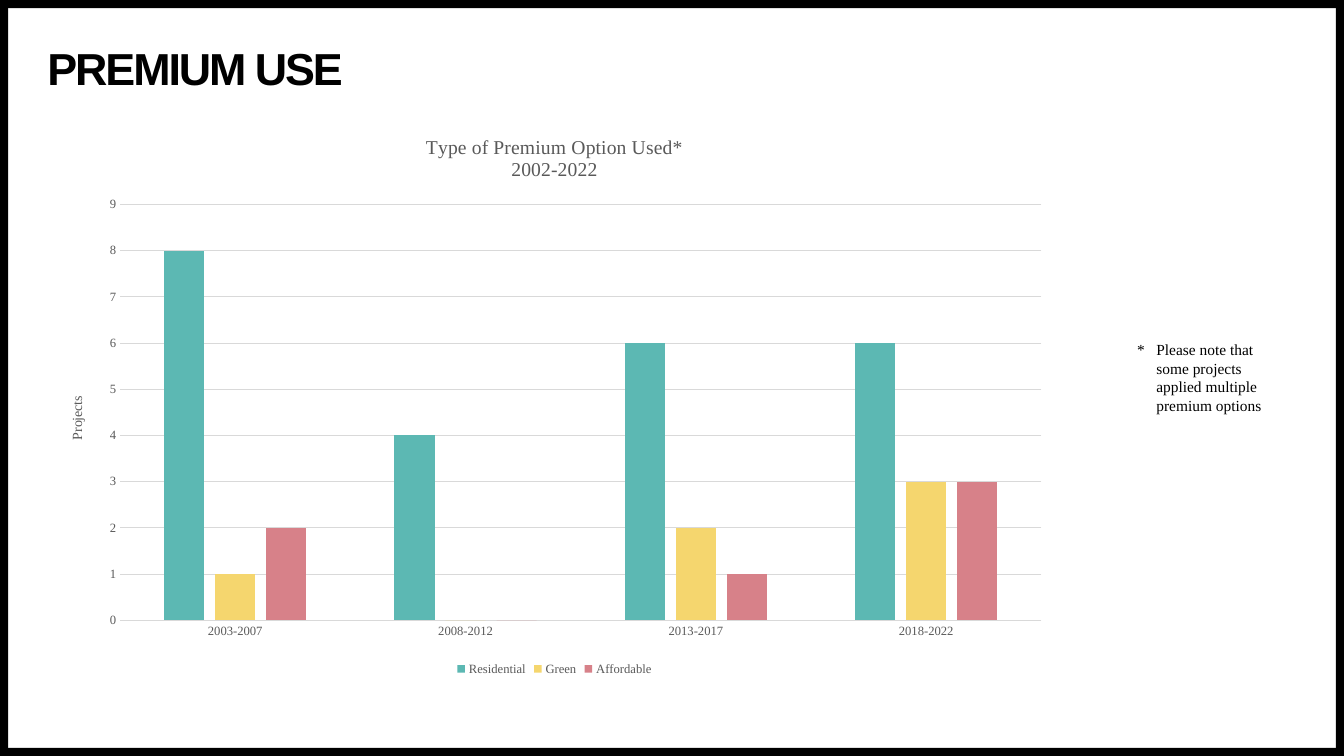
from dataclasses import dataclass

from pptx import Presentation
from pptx.chart.data import CategoryChartData
from pptx.dml.color import RGBColor
from pptx.enum.chart import XL_CHART_TYPE, XL_LEGEND_POSITION, XL_TICK_MARK
from pptx.enum.shapes import MSO_SHAPE
from pptx.enum.text import MSO_ANCHOR
from pptx.util import Inches, Pt

CLUSTERED = XL_CHART_TYPE.COLUMN_CLUSTERED
LEGEND_BOTTOM = XL_LEGEND_POSITION.BOTTOM
NO_TICK = XL_TICK_MARK.NONE
RECTANGLE = MSO_SHAPE.RECTANGLE
MIDDLE = MSO_ANCHOR.MIDDLE


@dataclass(frozen=True)
class Theme:
    black: RGBColor = RGBColor.from_string("000000")
    gray: RGBColor = RGBColor.from_string("595959")
    grid: RGBColor = RGBColor.from_string("D9D9D9")
    heading_font: str = "Arial"
    body_font: str = "Times New Roman"
    heading_size: int = 32
    chart_title_size: int = 14
    note_size: int = 11
    axis_title_size: int = 10
    label_size: int = 9
    line_width: float = 0.75


THEME = Theme()
PERIODS = ("2003-2007", "2008-2012", "2013-2017", "2018-2022")
PREMIUMS = (
    ("Residential", (8, 4, 6, 6), RGBColor.from_string("5CB8B3")),
    ("Green", (1, 0, 2, 3), RGBColor.from_string("F5D66E")),
    ("Affordable", (2, 0, 1, 3), RGBColor.from_string("D78189")),
)


def style_font(font, name, size, color, bold=False):
    font.name = name
    font.size = Pt(size)
    font.color.rgb = color
    font.bold = bold


def style_line(line):
    line.color.rgb = THEME.grid
    line.width = Pt(THEME.line_width)


def add_frame(slide, left, top, width, height, thickness=0.08):
    sides = (
        (left, top, width, thickness),
        (left, top + height - thickness, width, thickness),
        (left, top, thickness, height),
        (left + width - thickness, top, thickness, height),
    )
    for side in sides:
        shape = slide.shapes.add_shape(RECTANGLE, *map(Inches, side))
        shape.shadow.inherit = False
        shape.fill.solid()
        shape.fill.fore_color.rgb = THEME.black
        shape.line.fill.background()


def add_heading(slide, left, top, width, height):
    box = slide.shapes.add_textbox(*map(Inches, (left, top, width, height)))
    text_frame = box.text_frame
    text_frame.word_wrap = True
    text_frame.vertical_anchor = MIDDLE
    text_frame.margin_left = text_frame.margin_right = 0
    text_frame.margin_top = text_frame.margin_bottom = 0
    text_frame.text = "PREMIUM USE"
    paragraph = text_frame.paragraphs[0]
    paragraph.line_spacing = 0.9
    run = paragraph.runs[0]
    style_font(run.font, THEME.heading_font, THEME.heading_size, THEME.black, True)
    run.font._element.set("spc", "-150")


def style_chart_title(title, text, size):
    title.text_frame.text = text
    for paragraph in title.text_frame.paragraphs:
        for run in paragraph.runs:
            style_font(run.font, THEME.body_font, size, THEME.gray)


def style_axes(chart):
    for axis in (chart.category_axis, chart.value_axis):
        axis.major_tick_mark = NO_TICK
        axis.minor_tick_mark = NO_TICK
        style_font(axis.tick_labels.font, THEME.body_font, THEME.label_size, THEME.gray)
    style_line(chart.category_axis.format.line)
    value_axis = chart.value_axis
    value_axis.minimum_scale = 0
    value_axis.maximum_scale = 9
    value_axis.major_unit = 1
    value_axis.format.line.fill.background()
    style_line(value_axis.major_gridlines.format.line)
    style_chart_title(value_axis.axis_title, "Projects", THEME.axis_title_size)


def add_premium_chart(slide, left, top, width, height):
    data = CategoryChartData()
    data.categories = PERIODS
    for name, values, _ in PREMIUMS:
        data.add_series(name, values)
    box = map(Inches, (left, top, width, height))
    chart = slide.shapes.add_chart(CLUSTERED, *box, data).chart
    style_font(chart.font, THEME.body_font, THEME.axis_title_size, THEME.black)
    title = "Type of Premium Option Used*\n2002-2022"
    style_chart_title(chart.chart_title, title, THEME.chart_title_size)
    chart.chart_title.include_in_layout = False
    style_axes(chart)
    plot = chart.plots[0]
    plot.gap_width = 219
    plot.overlap = -27
    plot.vary_by_categories = False
    for series, (_, _, color) in zip(plot.series, PREMIUMS):
        series.format.fill.solid()
        series.format.fill.fore_color.rgb = color
    chart.has_legend = True
    chart.legend.position = LEGEND_BOTTOM
    chart.legend.include_in_layout = False
    style_font(chart.legend.font, THEME.body_font, THEME.label_size, THEME.gray)


def add_note(slide, left, top, width, height, hanging=0.19):
    box = slide.shapes.add_textbox(*map(Inches, (left, top, width, height)))
    text_frame = box.text_frame
    text_frame.word_wrap = True
    text_frame.text = "*\tPlease note that some projects applied multiple premium options"
    paragraph = text_frame.paragraphs[0]
    properties = paragraph._p.get_or_add_pPr()
    properties.set("marL", str(Inches(hanging)))
    properties.set("indent", str(-Inches(hanging)))
    for run in paragraph.runs:
        style_font(run.font, THEME.body_font, THEME.note_size, THEME.black)


def main():
    presentation = Presentation()
    presentation.slide_width = Inches(13.33)
    presentation.slide_height = Inches(7.5)
    slide = presentation.slides.add_slide(presentation.slide_layouts[6])
    add_frame(slide, 0, 0, 13.33, 7.5)
    add_heading(slide, 0.47, 0.47, 10.06, 0.47)
    add_premium_chart(slide, 0.47, 1.14, 10.06, 5.61)
    add_note(slide, 11.18, 3.33, 1.49, 0.84)
    presentation.save("out.pptx")


if __name__ == "__main__":
    main()
